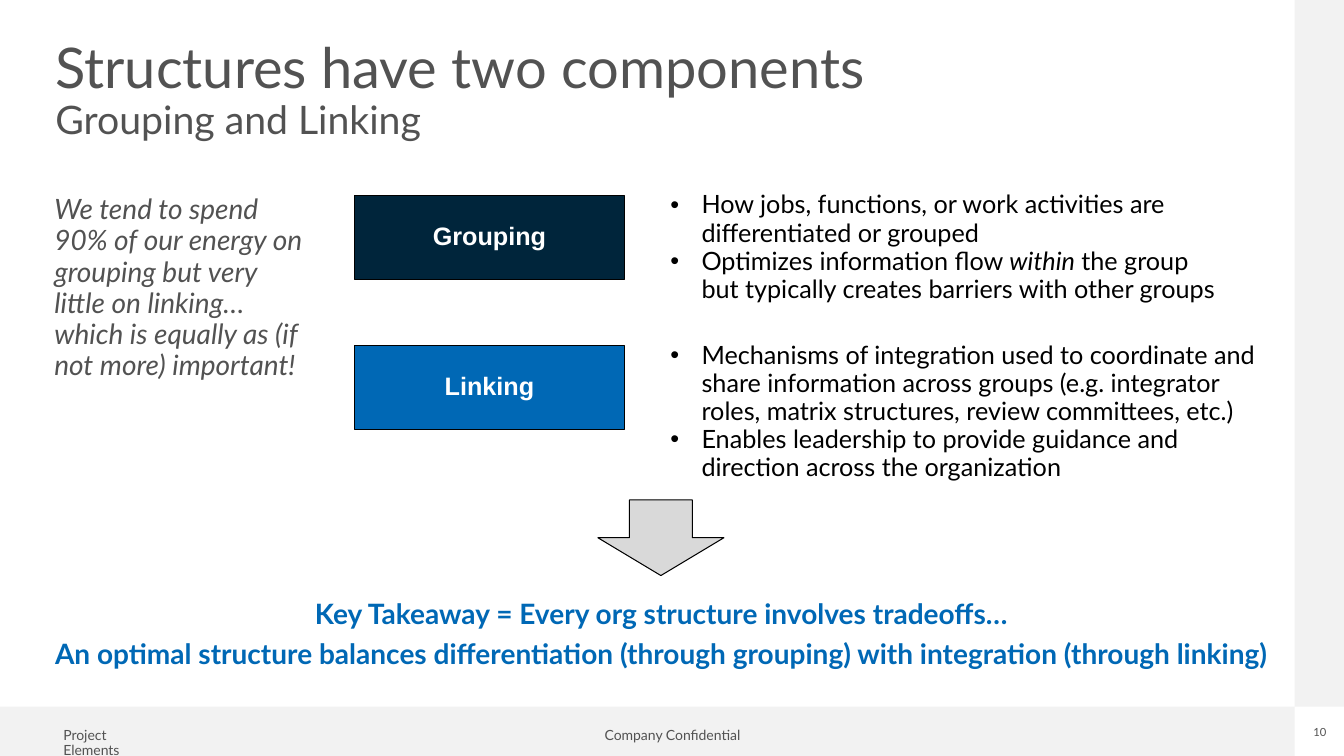
from dataclasses import dataclass

from lxml import etree
from pptx import Presentation
from pptx import util as u
from pptx.dml.color import RGBColor
from pptx.enum import shapes, text
from pptx.oxml.ns import qn


@dataclass(frozen=True)
class Theme:
    body_font: str = "Lato"
    box_font: str = "Arial"
    black: str = "000000"
    white: str = "FFFFFF"
    gray: str = "525252"
    band: str = "F2F2F2"
    arrow: str = "D9D9D9"
    navy: str = "00253B"
    blue: str = "0068B5"
    title: int = 40
    subtitle: int = 28
    callout: int = 20
    body: int = 18
    footer: int = 10
    page: int = 8


THEME = Theme()
LEFT, CENTER = text.PP_ALIGN.LEFT, text.PP_ALIGN.CENTER
TOP, MIDDLE = text.MSO_ANCHOR.TOP, text.MSO_ANCHOR.MIDDLE


def add_bullet(paragraph, indent=0.31):
    properties = paragraph._p.get_or_add_pPr()
    properties.set("marL", str(u.Inches(indent)))
    properties.set("indent", str(-u.Inches(indent)))
    etree.SubElement(properties, qn("a:buFont"), typeface="Arial")
    etree.SubElement(properties, qn("a:buChar"), char="•")


def write_text(frame, paragraphs, size=THEME.body, color=THEME.black, font=THEME.body_font,
               bold=False, italic=False, align=LEFT, anchor=TOP, spacing=0.93, before=0,
               bullet=False, margins=True, wrap=True):
    """Fill a frame; a paragraph is a string or a list of (string, font overrides).

    A string that ends in a newline is followed by a line break.
    """
    frame.word_wrap = wrap
    frame.auto_size = text.MSO_AUTO_SIZE.NONE
    frame.vertical_anchor = anchor
    if not margins:
        frame.margin_left = frame.margin_right = frame.margin_top = frame.margin_bottom = 0
    for index, content in enumerate(paragraphs):
        paragraph = frame.add_paragraph() if index else frame.paragraphs[0]
        paragraph.alignment = align
        paragraph.line_spacing = spacing
        paragraph.space_before = u.Pt(before if index else 0)
        if bullet:
            add_bullet(paragraph)
        for words, changes in [(content, {})] if isinstance(content, str) else content:
            run = paragraph.add_run()
            run.text = words.rstrip("\n")
            run.font.name = font
            run.font.size = u.Pt(changes.get("size", size))
            run.font.bold = bold
            run.font.italic = changes.get("italic", italic)
            run.font.color.rgb = RGBColor.from_string(color)
            if words.endswith("\n"):
                paragraph.add_line_break()


class SlideBuilder:
    def __init__(self, presentation, theme):
        self.theme = theme
        self.slide = presentation.slides.add_slide(presentation.slide_layouts[5])

    def title(self, box, heading, subheading):
        shape = self.slide.shapes.title
        shape.left, shape.top, shape.width, shape.height = map(u.Inches, box)
        runs = [(heading + "\n", {}), (subheading, {"size": self.theme.subtitle})]
        write_text(shape.text_frame, [runs], size=self.theme.title, color=self.theme.gray,
                   spacing=0.9, margins=False)

    def shape(self, kind, box, fill, outlined=True):
        shape = self.slide.shapes.add_shape(kind, *map(u.Inches, box))
        shape.shadow.inherit = False
        shape.fill.solid()
        shape.fill.fore_color.rgb = RGBColor.from_string(fill)
        if outlined:
            shape.line.color.rgb = RGBColor.from_string(self.theme.black)
            shape.line.width = u.Pt(0.75)
        else:
            shape.line.fill.background()
        return shape

    def band(self, box):
        self.shape(shapes.MSO_SHAPE.RECTANGLE, box, self.theme.band, outlined=False)

    def label_box(self, box, label, fill):
        shape = self.shape(shapes.MSO_SHAPE.RECTANGLE, box, fill)
        write_text(shape.text_frame, [label], color=self.theme.white, font=self.theme.box_font,
                   bold=True, align=CENTER, anchor=MIDDLE)

    def text(self, box, paragraphs, **style):
        shape = self.slide.shapes.add_textbox(*map(u.Inches, box))
        write_text(shape.text_frame, paragraphs, **style)


def main():
    presentation = Presentation()
    presentation.slide_width = u.Inches(13.33)
    presentation.slide_height = u.Inches(7.5)
    builder = SlideBuilder(presentation, THEME)

    builder.band((0, 7.01, 12.84, 0.49))
    builder.band((12.84, 0, 0.49, 7.01))
    footer = {"size": THEME.footer, "color": THEME.gray, "spacing": 0.9}
    builder.text((0.53, 7.18, 1.17, 0.25), ["Project Elements"], **footer)
    builder.text((5.94, 7.18, 1.46, 0.25), ["Company Confidential"], align=CENTER, wrap=False,
                 **footer)
    builder.text((13.02, 7.2, 0.14, 0.13), ["10"], size=THEME.page, color=THEME.gray,
                 align=CENTER, spacing=1.0, margins=False, wrap=False)

    builder.title((0.55, 0.4, 12, 1.27), "Structures have two components",
                  "Grouping and Linking")
    builder.text((0.44, 1.88, 2.67, 2.29),
                 ["We tend to spend 90% of our energy on grouping but very little on linking… "
                  "which is equally as (if not more) important!"],
                 size=THEME.callout, color=THEME.gray, italic=True)

    components = [
        ("Grouping", THEME.navy, 1.94, 5.67, 1.23, [
            "How jobs, functions, or work activities are differentiated or grouped",
            [("Optimizes information flow ", {}), ("within", {"italic": True}),
             (" the group but typically creates barriers with other groups", {})],
        ]),
        ("Linking", THEME.blue, 3.43, 6.08, 1.51, [
            "Mechanisms of integration used to coordinate and share information across groups "
            "(e.g. integrator roles, matrix structures, review committees, etc.)",
            "Enables leadership to provide guidance and direction across the organization",
        ]),
    ]
    for label, fill, top, width, height, points in components:
        builder.label_box((3.52, top, 2.67, 0.83), label, fill)
        builder.text((6.55, top - 0.09, width, height), points, bullet=True)

    builder.shape(shapes.MSO_SHAPE.DOWN_ARROW, (5.93, 4.96, 1.25, 0.75), THEME.arrow)
    builder.text((-0.41, 5.9, 13.94, 0.81),
                 ["Key Takeaway = Every org structure involves tradeoffs…",
                  "An optimal structure balances differentiation (through grouping) "
                  "with integration (through linking)"],
                 size=THEME.callout, color=THEME.blue, bold=True, align=CENTER, before=6)

    presentation.save("out.pptx")


if __name__ == "__main__":
    main()
